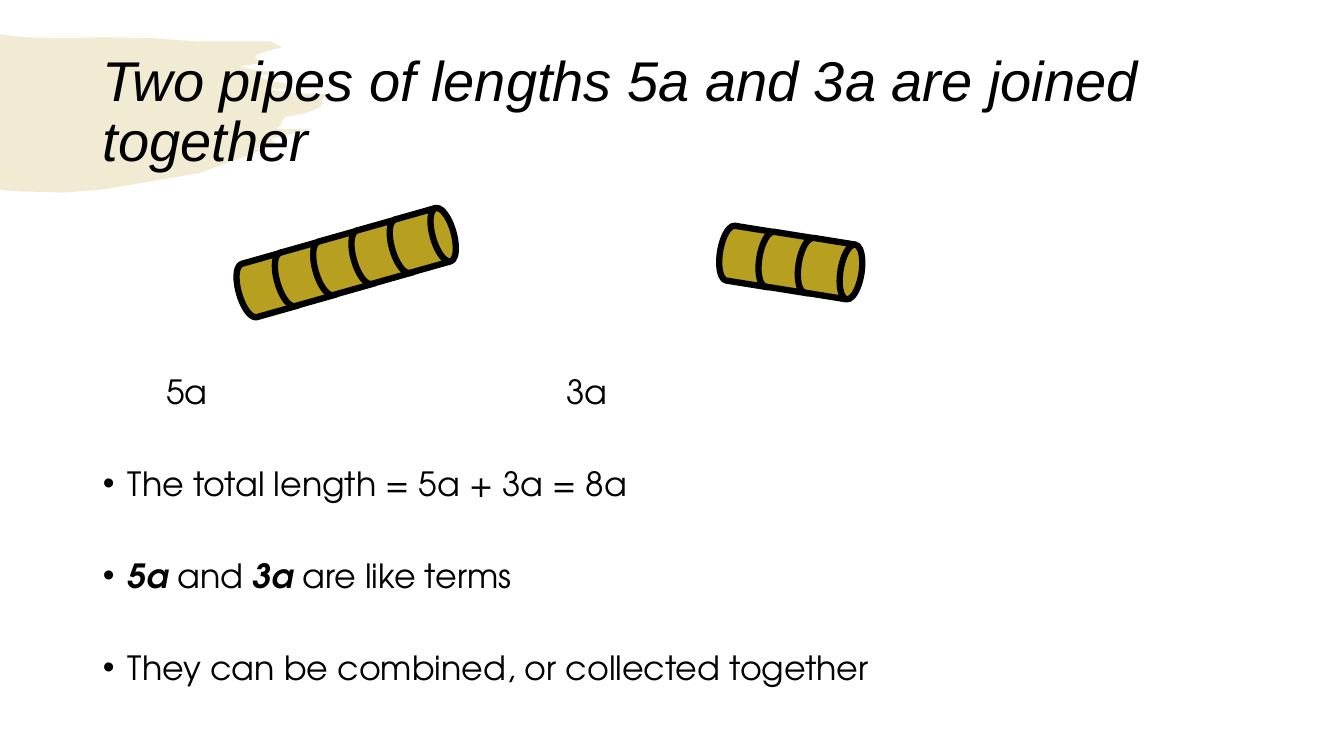
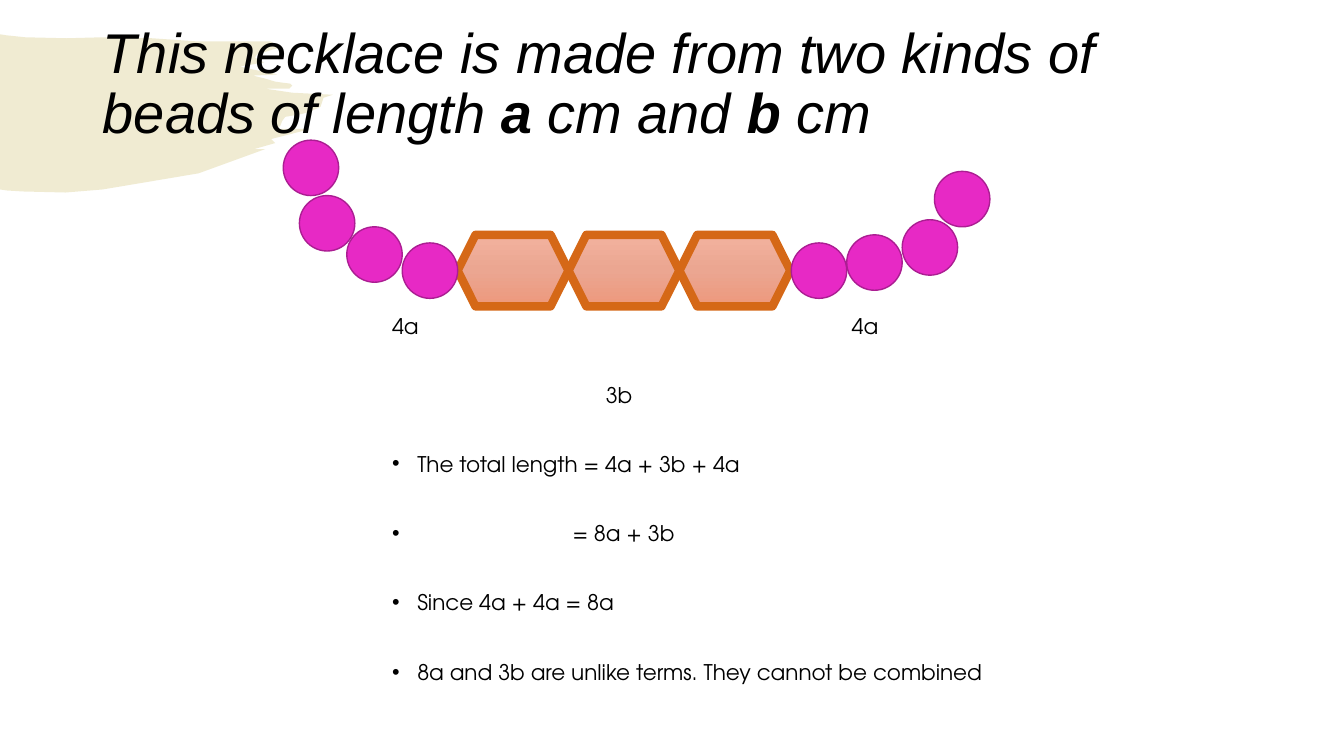
from copy import deepcopy
from dataclasses import dataclass

from lxml import etree
from pptx import Presentation, util as u
from pptx.dml.color import RGBColor
from pptx.enum import shapes, text
from pptx.oxml.ns import qn

PX = 9144  # EMU in one px, 100 px to the inch


@dataclass(frozen=True)
class Theme:
    ink: str = "000000"
    olive: str = "B79F20"
    pink: str = "E729C5"
    pink_edge: str = "AB1E92"
    orange: str = "D56817"
    peach: tuple = ("F2B29E", "EBA691", "ED987C")
    title_font: str = "Arial"
    body_font: str = "TeX Gyre Adventor"
    title_size: float = 40
    pipe_size: float = 23.8
    bead_size: float = 15.4


theme = Theme()

# Outline of the brush stroke behind every title
BRUSH = [
    (0, 34), (6, 35), (25, 37), (66, 38), (102, 37), (151, 38), (194, 41),
    (248, 41), (268, 41), (280, 47), (271, 49), (255, 54), (253, 57), (256, 59),
    (262, 62), (238, 66), (246, 68), (256, 70), (266, 71), (275, 74), (251, 75),
    (263, 78), (273, 81), (280, 82), (288, 83), (290, 85), (287, 88), (284, 88),
    (263, 88), (290, 92), (330, 94), (321, 97), (318, 106), (307, 111),
    (300, 113), (283, 116), (280, 120), (278, 125), (274, 128), (308, 128),
    (269, 138), (273, 142), (252, 148), (263, 148), (197, 172), (102, 188),
    (65, 191), (23, 190), (7, 189), (0, 188),
]


def add_text(page, box, paragraphs, size, font=theme.body_font, spacing=0.8, gap=0):
    """Each paragraph is (hanging indent, spans); an indent above 0 brings a bullet."""
    frame = page.shapes.add_textbox(*(n * PX for n in box)).text_frame
    frame.word_wrap = True
    frame.margin_left = frame.margin_right = frame.margin_top = frame.margin_bottom = 0
    for number, (hang, spans) in enumerate(paragraphs):
        para = frame.add_paragraph() if number else frame.paragraphs[0]
        para.line_spacing = spacing
        para.space_before = u.Pt(gap if number else 0)
        if hang:
            props = para._p.get_or_add_pPr()
            props.set("marL", str(hang * PX))
            props.set("indent", str(-hang * PX))
            etree.SubElement(props, qn("a:buFont")).set("typeface", "Arial")
            etree.SubElement(props, qn("a:buChar")).set("char", "•")
        for words, style in spans:
            span = para.add_run()
            span.text = words
            span.font.name = font
            span.font.size = u.Pt(size)
            span.font.bold = "b" in style
            span.font.italic = "i" in style
            span.font.color.rgb = RGBColor.from_string(theme.ink)
    return frame


def add_piece(group, kind, box, fill, edge, weight):
    piece = group.shapes.add_shape(kind, *(n * PX for n in box))
    piece.shadow.inherit = False
    piece.fill.solid()
    piece.fill.fore_color.rgb = RGBColor.from_string(fill)
    piece.line.color.rgb = RGBColor.from_string(edge)
    piece.line.width = u.Pt(weight)
    return piece


deck = Presentation()
deck.slide_width, deck.slide_height = u.Inches(13.333), u.Inches(7.5)

# Brush stroke and title on each page
titles = [
    (40, [("Two pipes of lengths 5a and 3a are joined together", "i")]),
    (12, [("This necklace is made from two kinds of beads of length ", "i"),
          ("a ", "bi"), ("cm and ", "i"), ("b ", "bi"), ("cm", "i")]),
]
pages = []
for top, spans in titles:
    page = deck.slides.add_slide(deck.slide_layouts[6])
    outline = page.shapes.build_freeform(*BRUSH[0], scale=PX)
    outline.add_line_segments(BRUSH[1:], close=True)
    brush = outline.convert_to_shape()
    brush.shadow.inherit = False
    brush.fill.solid()
    brush.fill.fore_color.rgb = RGBColor.from_string(theme.olive)
    tint = brush._element.spPr.find(qn("a:solidFill")).find(qn("a:srgbClr"))
    etree.SubElement(tint, qn("a:alpha")).set("val", "20000")
    brush.line.fill.background()
    frame = add_text(page, (102, top, 1130, 145), [(0, spans)],
                     theme.title_size, theme.title_font, 0.9)
    frame.vertical_anchor = text.MSO_ANCHOR.MIDDLE
    pages.append(page)
pipe_page, necklace_page = pages

# Pipes: count, start, step, rotation
for count, left, top, step_x, step_y, turn in [
    (5, 236, 255, 38, -11, 344.2),
    (3, 714, 227, 39, 6, 9.1),
]:
    pipe = pipe_page.shapes.add_group_shape()
    for i in range(count):
        drum = add_piece(pipe, shapes.MSO_SHAPE.FLOWCHART_DIRECT_ACCESS_STORAGE,
                         (left + i * step_x, top + i * step_y, 63, 55),
                         theme.olive, theme.ink, 4.5)
        drum.rotation = turn

# Pipe labels and conclusions
for words, left in [("5a", 165), ("3a", 562)]:
    add_text(pipe_page, (left, 376, 100, 32), [(0, [(words, "")])], theme.pipe_size)
add_text(pipe_page, (102, 467, 1130, 215), [
    (25, [("The total length = 5a + 3a = 8a", "")]),
    (25, [("5a", "bi"), (" and ", ""), ("3a", "bi"), (" are like terms", "")]),
    (25, [("They can be combined, or collected together", "")]),
], theme.pipe_size, gap=42.9)

# Necklace: three long beads between two strings of round ones
necklace = necklace_page.shapes.add_group_shape()
for i in range(3):
    bead = add_piece(necklace, shapes.MSO_SHAPE.HEXAGON, (454 + i * 110, 233, 110, 71),
                     theme.orange, theme.orange, 6)
    bead.fill.gradient()
    bead.fill.gradient_angle = 270
    stop_list = bead._element.spPr.find(qn("a:gradFill")).find(qn("a:gsLst"))
    stop_list.append(deepcopy(stop_list[0]))
    for n, (stop, tone) in enumerate(zip(bead.fill.gradient_stops, theme.peach)):
        stop.position = n / 2
        stop.color.rgb = RGBColor.from_string(tone)
for left, top in [(399, 241), (344, 225), (297, 194), (281, 139),
                  (785, 241), (840, 233), (895, 218), (927, 170)]:
    add_piece(necklace, shapes.MSO_SHAPE.OVAL, (left, top, 55, 55),
              theme.pink, theme.pink_edge, 1)

# Necklace labels and conclusions
for words, left, top in [("4a", 389, 315), ("4a", 845, 315), ("3b", 601, 384)]:
    add_text(necklace_page, (left, top, 100, 21), [(0, [(words, "")])], theme.bead_size)
add_text(necklace_page, (389, 452, 900, 230), [
    (25, [("The total length = 4a + 3b + 4a", "")]),
    (179, [("= 8a + 3b", "")]),
    (25, [("Since 4a + 4a = 8a", "")]),
    (25, [("8a and 3b are unlike terms. They cannot be combined", "")]),
], theme.bead_size, gap=34.8)

deck.save("out.pptx")
